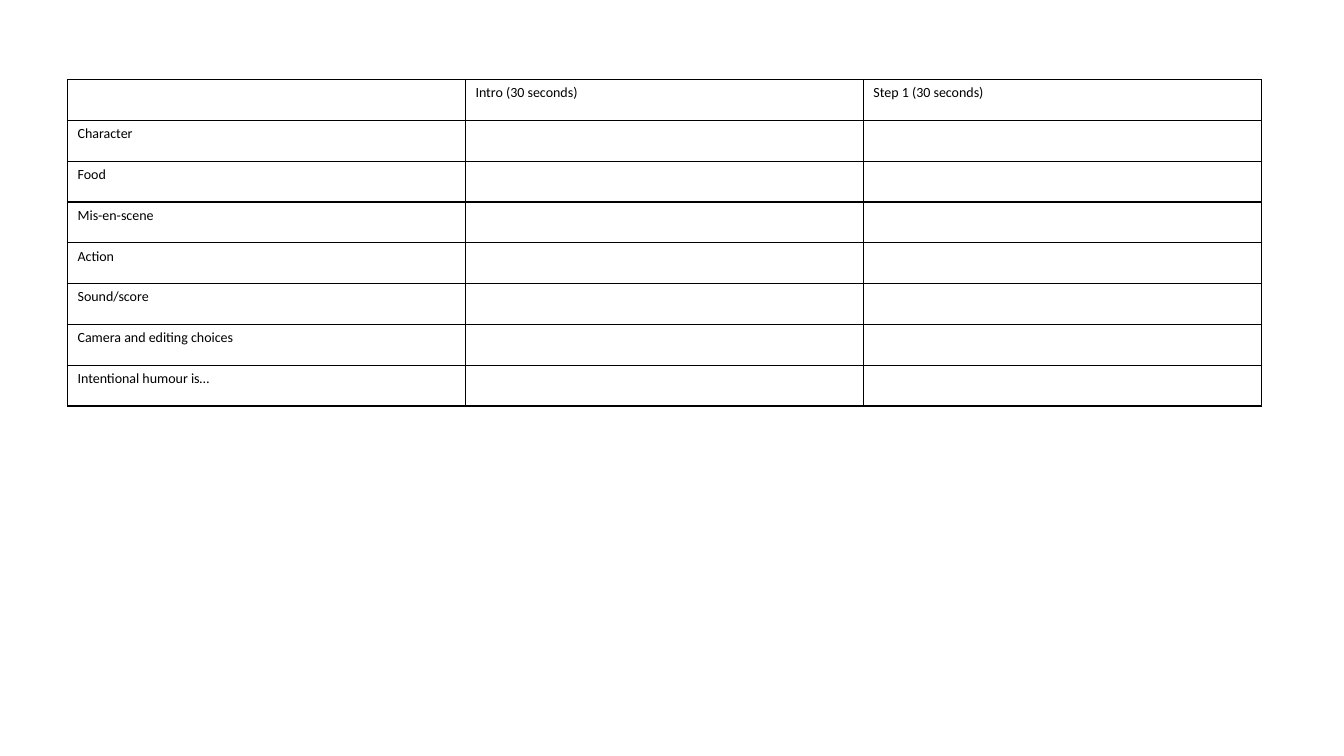
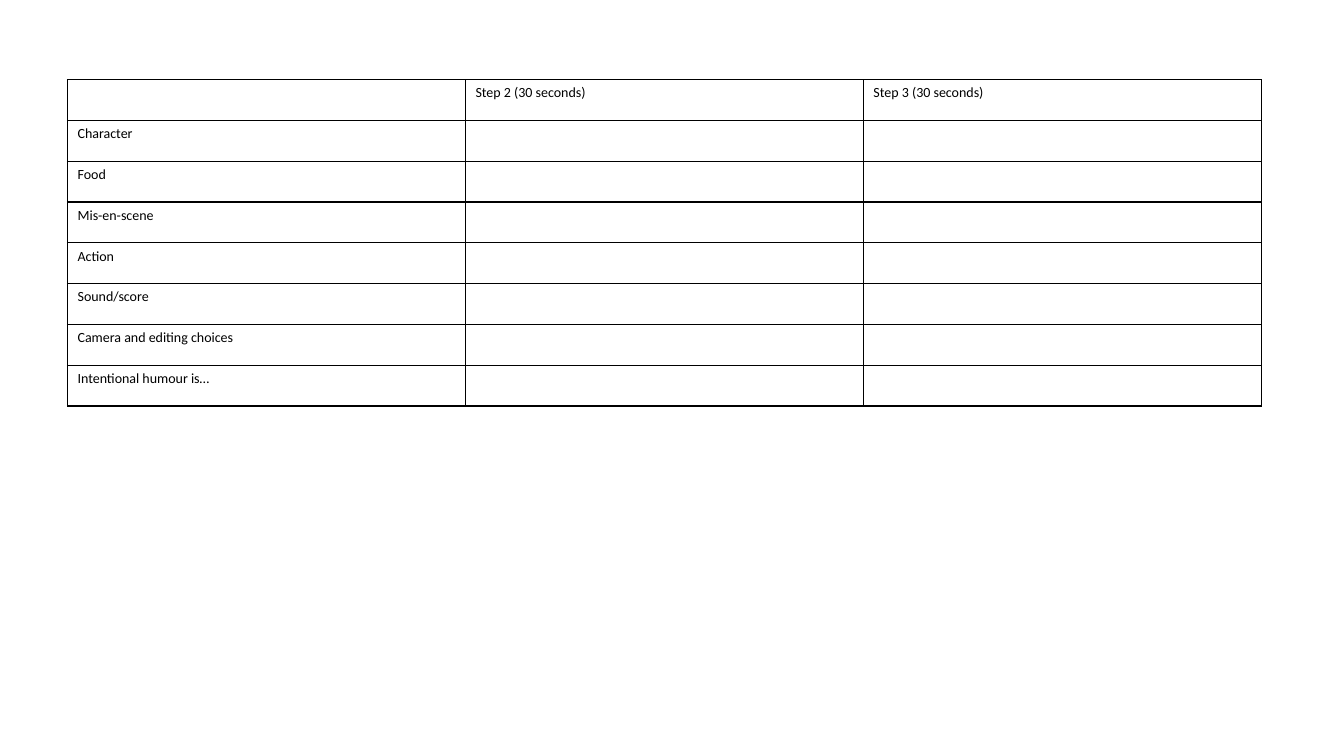
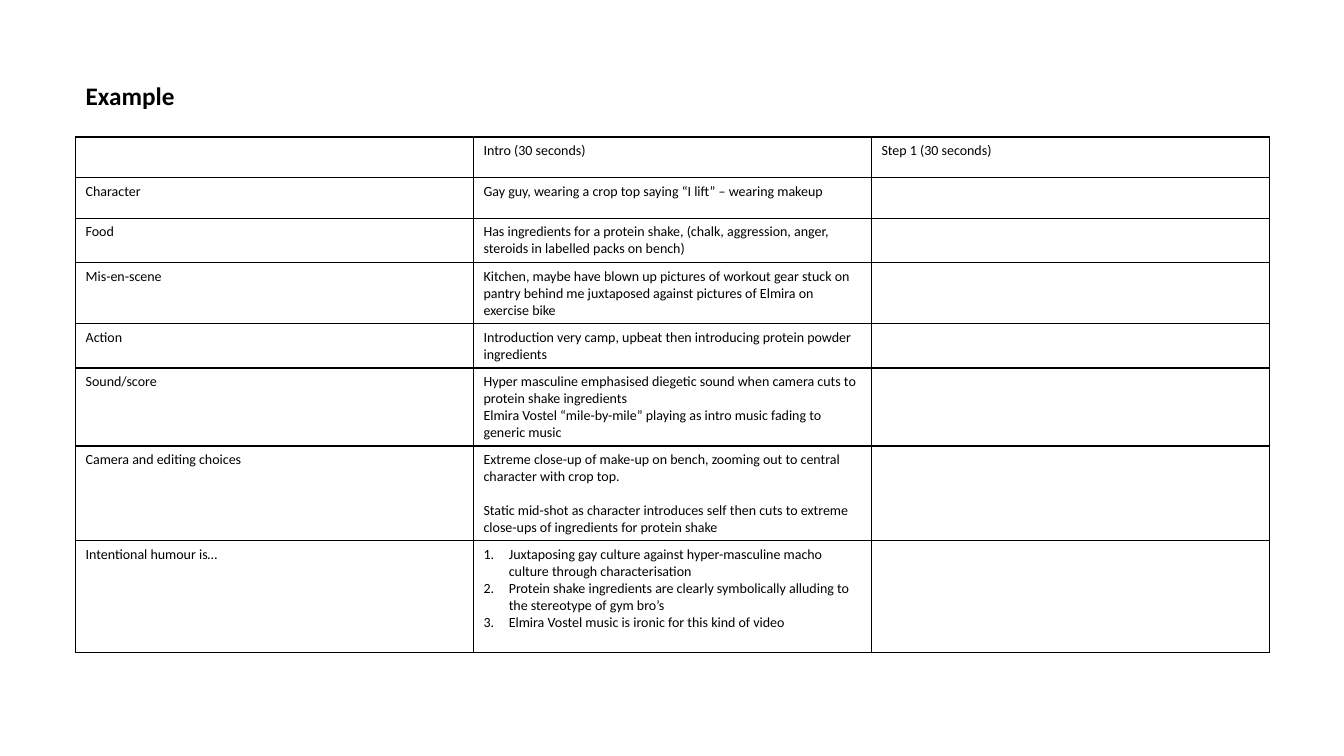
from lxml import etree
from pptx import Presentation
from pptx.dml.color import RGBColor
from pptx.enum.text import MSO_ANCHOR, MSO_AUTO_SIZE, PP_ALIGN
from pptx.oxml.ns import qn
from pptx.util import Inches, Pt

LEFT = PP_ALIGN.LEFT
MIDDLE = MSO_ANCHOR.MIDDLE
NO_AUTOSIZE = MSO_AUTO_SIZE.NONE

COLORS = {"ink": "000000"}
FONT = "Calibri"
TITLE_ONLY, BLANK = 5, 6
COLUMN = Inches(11.84) // 3
ROW = Inches(3.24) // 8

TOPICS = ["Character", "Food", "Mis-en-scene", "Action", "Sound/score",
          "Camera and editing choices", "Intentional humour is…"]
EXAMPLE = [
    ["Gay guy, wearing a crop top saying “I lift” – wearing makeup"],
    ["Has ingredients for a protein shake, (chalk, aggression, anger, "
     "steroids in labelled packs on bench)"],
    ["Kitchen, maybe have blown up pictures of workout gear stuck on pantry "
     "behind me juxtaposed against pictures of Elmira on exercise bike"],
    ["Introduction very camp, upbeat then introducing protein powder ingredients"],
    ["Hyper masculine emphasised diegetic sound when camera cuts to protein "
     "shake ingredients",
     "Elmira Vostel “mile-by-mile” playing as intro music fading to generic music"],
    ["Extreme close-up of make-up on bench, zooming out to central character "
     "with crop top.",
     "Static mid-shot as character introduces self then cuts to extreme "
     "close-ups of ingredients for protein shake"],
    ["Juxtaposing gay culture against hyper-masculine macho culture through "
     "characterisation",
     "Protein shake ingredients are clearly symbolically alluding to the "
     "stereotype of gym bro’s",
     "Elmira Vostel music is ironic for this kind of video"],
]
CAMERA, HUMOUR = 5, 6


def write(frame, lines, size=10, bold=False, gap=0, numbered=False):
    """Fill a text frame with one paragraph per line; gap is in points."""
    for index, line in enumerate(lines):
        para = frame.paragraphs[0] if index == 0 else frame.add_paragraph()
        para.alignment = LEFT
        para.font.size = Pt(size)
        if index and gap:
            para.space_before = Pt(gap)
        if numbered:
            properties = para._p.get_or_add_pPr()
            properties.set("marL", str(Inches(0.25)))
            properties.set("indent", str(-Inches(0.25)))
            numbers = etree.Element(qn("a:buAutoNum"), type="arabicPeriod")
            properties.insert_element_before(numbers, "a:defRPr")
        span = para.add_run()
        span.text = line
        span.font.name = FONT
        span.font.size = Pt(size)
        span.font.bold = bold
        span.font.color.rgb = RGBColor.from_string(COLORS["ink"])


def outline(cell, width=1):
    properties = cell._tc.get_or_add_tcPr()
    for side in ("a:lnL", "a:lnR", "a:lnT", "a:lnB"):
        line = etree.SubElement(properties, qn(side), w=str(Pt(width)))
        fill = etree.SubElement(line, qn("a:solidFill"))
        etree.SubElement(fill, qn("a:srgbClr"), val=COLORS["ink"])


class Planner:
    def __init__(self):
        self.deck = Presentation()
        self.deck.slide_width = Inches(13.33)
        self.deck.slide_height = Inches(7.5)
        self.slide = None

    def page(self, layout=BLANK):
        self.slide = self.deck.slides.add_slide(self.deck.slide_layouts[layout])

    def title(self, text, left, top, width, height):
        box = self.slide.shapes.title
        box.left, box.top = Inches(left), Inches(top)
        box.width, box.height = Inches(width), Inches(height)
        frame = box.text_frame
        frame.auto_size = NO_AUTOSIZE
        frame.word_wrap = False
        frame.vertical_anchor = MIDDLE
        write(frame, [text], size=18, bold=True)

    def plan(self, steps, left, top, answers=(), formats=None, last_row=None):
        """Draw topics against steps; answers fill the first step's column."""
        formats = formats or {}
        columns, rows = len(steps) + 1, len(TOPICS) + 1
        table = self.slide.shapes.add_table(
            rows, columns, Inches(left), Inches(top),
            COLUMN * columns, ROW * rows).table
        table.first_row = table.horz_banding = False
        if last_row:
            table.rows[rows - 1].height = Inches(last_row)
        for cell in table.iter_cells():
            outline(cell)
            cell.fill.background()
            cell.text_frame.paragraphs[0].font.size = Pt(10)
        for column, step in enumerate(steps, 1):
            write(table.cell(0, column).text_frame, [step])
        for row, topic in enumerate(TOPICS, 1):
            write(table.cell(row, 0).text_frame, [topic])
        for index, lines in enumerate(answers):
            write(table.cell(index + 1, 1).text_frame, lines,
                  **formats.get(index, {}))


def main():
    intro, *steps = ["Intro (30 seconds)"] + [
        f"Step {number} (30 seconds)" for number in (1, 2, 3)]
    planner = Planner()
    for pair in ([intro, steps[0]], steps[1:]):
        planner.page()
        planner.plan(pair, 0.67, 0.79)

    planner.page(TITLE_ONLY)
    planner.plan([intro, steps[0]], 0.75, 1.36, EXAMPLE,
                 {CAMERA: {"gap": 12}, HUMOUR: {"numbered": True}},
                 last_row=1.11)
    planner.title("Example", 0.75, 0.75, 1.09, 0.4)
    planner.deck.save("out.pptx")


if __name__ == "__main__":
    main()
